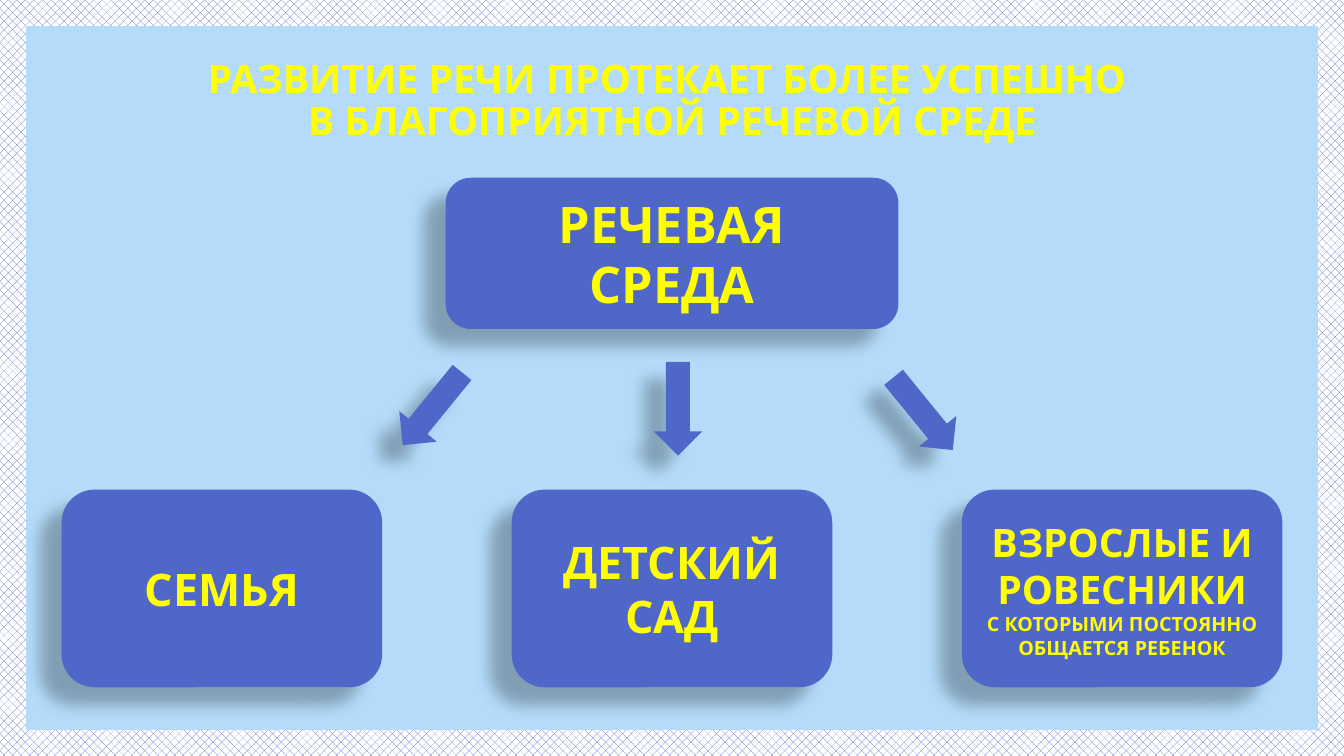
import lxml.etree
import pptx
import pptx.dml.color
import pptx.enum.dml
import pptx.enum.shapes
import pptx.enum.text
import pptx.oxml.ns
import pptx.util

Pt = pptx.util.Pt
SHAPE = pptx.enum.shapes.MSO_SHAPE
ALIGN = pptx.enum.text.PP_ALIGN
MIDDLE = pptx.enum.text.MSO_ANCHOR.MIDDLE
qn = pptx.oxml.ns.qn

FONT = "League Spartan"
HEX = {"blue": "4E67C8", "sky": "B4DCFA", "yellow": "FFFF00",
       "white": "FFFFFF", "black": "000000"}
COLORS = {name: pptx.dml.color.RGBColor.from_string(code) for name, code in HEX.items()}


def add_run(paragraph, text, size):
    run = paragraph.add_run()
    run.text = text
    run.font.name = FONT
    run.font.size = Pt(size)
    run.font.bold = True
    run.font.color.rgb = COLORS["yellow"]


def add_block(kind, left, top, width, height, color="blue", shadow=True):
    block = slide.shapes.add_shape(kind, Pt(left), Pt(top), Pt(width), Pt(height))
    block.fill.solid()
    block.fill.fore_color.rgb = COLORS[color]
    block.line.fill.background()
    block.shadow.inherit = False
    if shadow:
        effects = block._element.spPr.find(qn("a:effectLst"))
        outer = lxml.etree.SubElement(
            effects, qn("a:outerShdw"), blurRad=str(Pt(11.8)), dist=str(Pt(19.7)),
            dir=str(141 * 60000), algn="ctr", rotWithShape="0")
        shade = lxml.etree.SubElement(outer, qn("a:srgbClr"), val=HEX["black"])
        lxml.etree.SubElement(shade, qn("a:alpha"), val="28000")
    return block


presentation = pptx.Presentation()
presentation.slide_width = Pt(960)
presentation.slide_height = Pt(540)
slide = presentation.slides.add_slide(presentation.slide_layouts[5])

# Patterned border (6 is the 40 percent pattern) and sky panel, behind the title
border = slide.background.fill
border.patterned()
border.pattern = pptx.enum.dml.MSO_PATTERN(6)
border.fore_color.rgb = COLORS["blue"]
border.back_color.rgb = COLORS["white"]
panel = add_block(SHAPE.RECTANGLE, 18.7, 18.7, 922.6, 502.6, "sky", shadow=False)
slide.shapes._spTree.insert(2, panel._element)

# Title
title = slide.shapes.title
title.left, title.top, title.width, title.height = Pt(84), Pt(18.7), Pt(792), Pt(108)
title.text_frame.word_wrap = True
title.text_frame.auto_size = pptx.enum.text.MSO_AUTO_SIZE.NONE
title.text_frame.vertical_anchor = MIDDLE
heading = title.text_frame.paragraphs[0]
heading.alignment = ALIGN.CENTER
heading.line_spacing = 0.9
add_run(heading, "РАЗВИТИЕ РЕЧИ ПРОТЕКАЕТ БОЛЕЕ УСПЕШНО ", 28)
heading.add_line_break()
add_run(heading, "В БЛАГОПРИЯТНОЙ РЕЧЕВОЙ СРЕДЕ", 28)

# Arrows from the environment to its parts
for left, top, angle in [(291.6, 258.5, 39.2), (467, 258.5, 0), (642.2, 262, 320.8)]:
    arrow = add_block(SHAPE.DOWN_ARROW, left, top, 34.5, 67)
    arrow.rotation = angle

# Speech environment and its three parts
environment = (318.3, 127, 323.4, 108, [("РЕЧЕВАЯ", 36), ("СРЕДА", 36)])
part_lines = [
    [("СЕМЬЯ", 32)],
    [("ДЕТСКИЙ", 32), ("САД", 32)],
    [("ВЗРОСЛЫЕ И", 28), ("РОВЕСНИКИ", 28),
     ("С КОТОРЫМИ ПОСТОЯННО ОБЩАЕТСЯ РЕБЕНОК", 14)],
]
parts = [(44 + 321.5 * column, 349.7, 229, 141.2, lines)
         for column, lines in enumerate(part_lines)]

for left, top, width, height, lines in [environment, *parts]:
    frame = add_block(SHAPE.FLOWCHART_ALTERNATE_PROCESS, left, top, width, height).text_frame
    frame.word_wrap = True
    frame.vertical_anchor = MIDDLE
    for index, (text, size) in enumerate(lines):
        line = frame.add_paragraph() if index else frame.paragraphs[0]
        line.alignment = ALIGN.CENTER
        add_run(line, text, size)

presentation.save("out.pptx")
